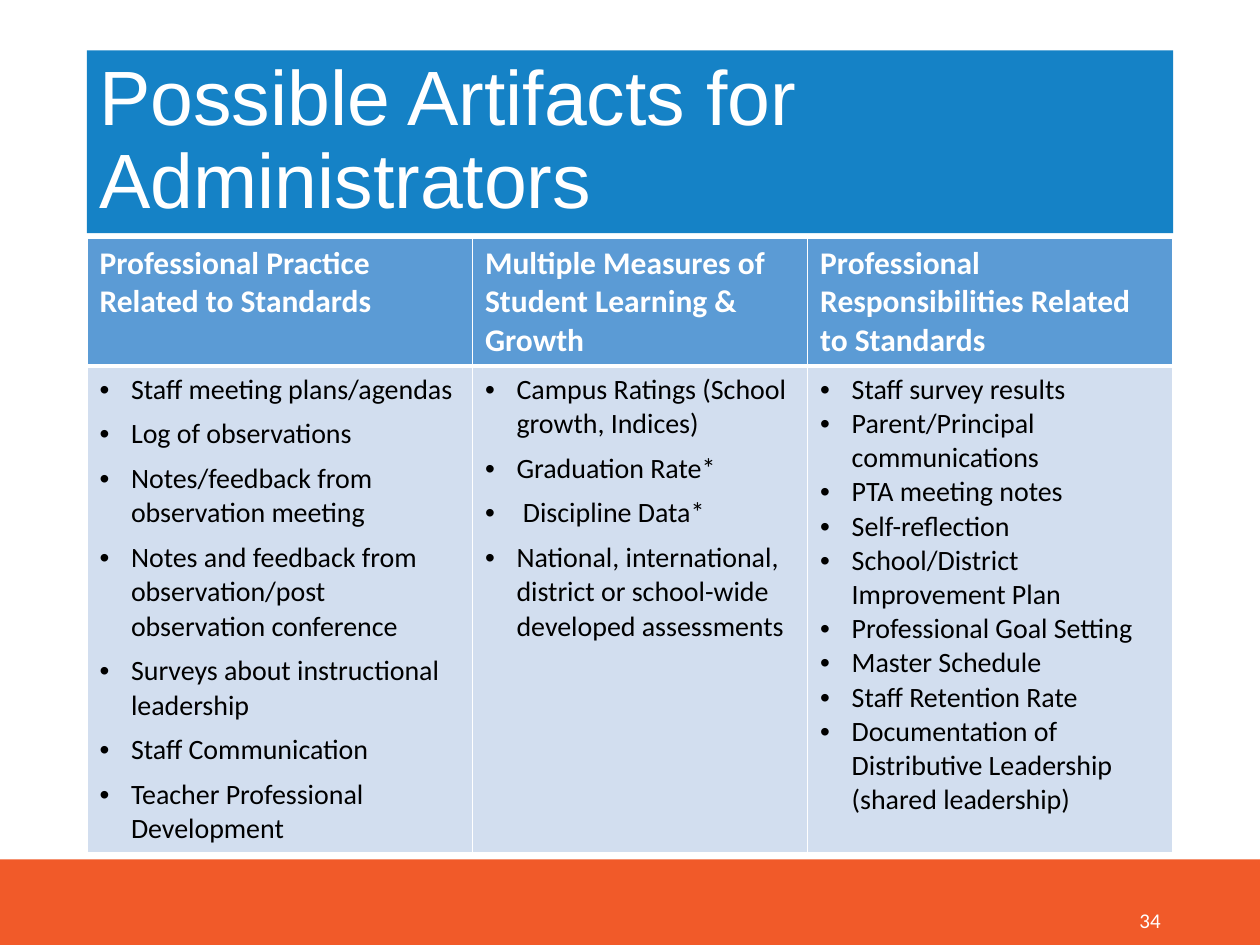
"""Build the slide listing possible artifacts for administrators."""
import pptx
import pptx.dml.color
import pptx.enum.shapes
import pptx.enum.text
import pptx.oxml
import pptx.oxml.ns
import pptx.util
from pptx.util import Inches

RGBColor = pptx.dml.color.RGBColor
WHITE = RGBColor(0xFF, 0xFF, 0xFF)
BLACK = RGBColor(0, 0, 0)
ORANGE = RGBColor(0xF1, 0x5A, 0x29)
BLUE = RGBColor(0x15, 0x82, 0xC6)
HEADER_BLUE = RGBColor(0x5B, 0x9B, 0xD5)
PALE_BLUE = RGBColor(0xD2, 0xDE, 0xEF)

COLUMNS = [
    ("Professional Practice Related to Standards", 3.06, 6, [
        "Staff meeting plans/agendas",
        "Log of observations",
        "Notes/feedback from observation meeting",
        "Notes and feedback from observation/post observation conference",
        "Surveys about instructional leadership",
        "Staff Communication",
        "Teacher Professional Development",
    ]),
    ("Multiple Measures of Student Learning & Growth", 2.66, 6, [
        "Campus Ratings (School growth, Indices)",
        "Graduation Rate*",
        " Discipline Data*",
        "National, international, district or school-wide developed assessments",
    ]),
    ("Professional Responsibilities Related to Standards", 2.9, 0, [
        "Staff survey results",
        "Parent/Principal communications",
        "PTA meeting notes",
        "Self-reflection",
        "School/District Improvement Plan",
        "Professional Goal Setting",
        "Master Schedule",
        "Staff Retention Rate",
        "Documentation of Distributive Leadership (shared leadership)",
    ]),
]


def style_text(p, size, color, name="Calibri", bold=False):
    for r in p.runs:
        r.font.size = pptx.util.Pt(size)
        r.font.name = name
        r.font.bold = bold
        r.font.color.rgb = color


def style_cell(cell, fill, top, bottom):
    tc_pr = cell._tc.get_or_add_tcPr()
    for side, width in (("L", 1), ("R", 1), ("T", top), ("B", bottom)):
        tc_pr.append(pptx.oxml.parse_xml(
            f'<a:ln{side} {pptx.oxml.ns.nsdecls("a")} w="{pptx.util.Pt(width)}">'
            f'<a:solidFill><a:srgbClr val="{WHITE}"/></a:solidFill></a:ln{side}>'))
    cell.fill.solid()
    cell.fill.fore_color.rgb = fill


prs = pptx.Presentation()
prs.slide_width, prs.slide_height = Inches(10), Inches(7.5)
s = prs.slides.add_slide(prs.slide_layouts[6])

bars = []
for left, top, width, height, color in (
        (0, 6.82, 10, 0.68, ORANGE), (0.69, 0.4, 8.62, 1.45, BLUE)):
    sp = s.shapes.add_shape(
        pptx.enum.shapes.MSO_SHAPE.RECTANGLE,
        Inches(left), Inches(top), Inches(width), Inches(height))
    sp.shadow.inherit = False
    sp.fill.solid()
    sp.fill.fore_color.rgb = color
    sp.line.fill.background()
    bars.append(sp)

tf = bars[1].text_frame
tf.text = "Possible Artifacts for Administrators"
tf.word_wrap = True
tf.vertical_anchor = pptx.enum.text.MSO_ANCHOR.MIDDLE
p = tf.paragraphs[0]
p.alignment = pptx.enum.text.PP_ALIGN.LEFT
p.line_spacing = 0.9
style_text(p, 44, WHITE, "Arial")

table = s.shapes.add_table(
    2, len(COLUMNS), Inches(0.69), Inches(1.89), Inches(8.62), Inches(4.85)).table
table.rows[0].height = Inches(1)
table.rows[1].height = Inches(3.85)

for i, (heading, width, gap, items) in enumerate(COLUMNS):
    table.columns[i].width = Inches(width)
    header, body = table.cell(0, i), table.cell(1, i)
    style_cell(header, HEADER_BLUE, 1, 3)
    style_cell(body, PALE_BLUE, 3, 1)
    header.text_frame.text = heading
    style_text(header.text_frame.paragraphs[0], 18, WHITE, bold=True)
    body.text_frame.text = "\n".join(items)
    for p in body.text_frame.paragraphs:
        p_pr = p._p.get_or_add_pPr()
        p_pr.set("marL", str(Inches(0.25)))
        p_pr.set("indent", str(Inches(-0.25)))
        for bullet in ('buFont typeface="Arial"', 'buChar char="•"'):
            p_pr.append(pptx.oxml.parse_xml(
                f'<a:{bullet} {pptx.oxml.ns.nsdecls("a")}/>'))
        p.space_after = pptx.util.Pt(gap)
        style_text(p, 16, BLACK)

sp = s.shapes.add_textbox(Inches(7.06), Inches(7.1), Inches(2.25), Inches(0.4))
tf = sp.text_frame
tf.text = "34"
tf.word_wrap = True
tf.vertical_anchor = pptx.enum.text.MSO_ANCHOR.MIDDLE
p = tf.paragraphs[0]
p.alignment = pptx.enum.text.PP_ALIGN.RIGHT
style_text(p, 12, WHITE)

prs.save("out.pptx")
